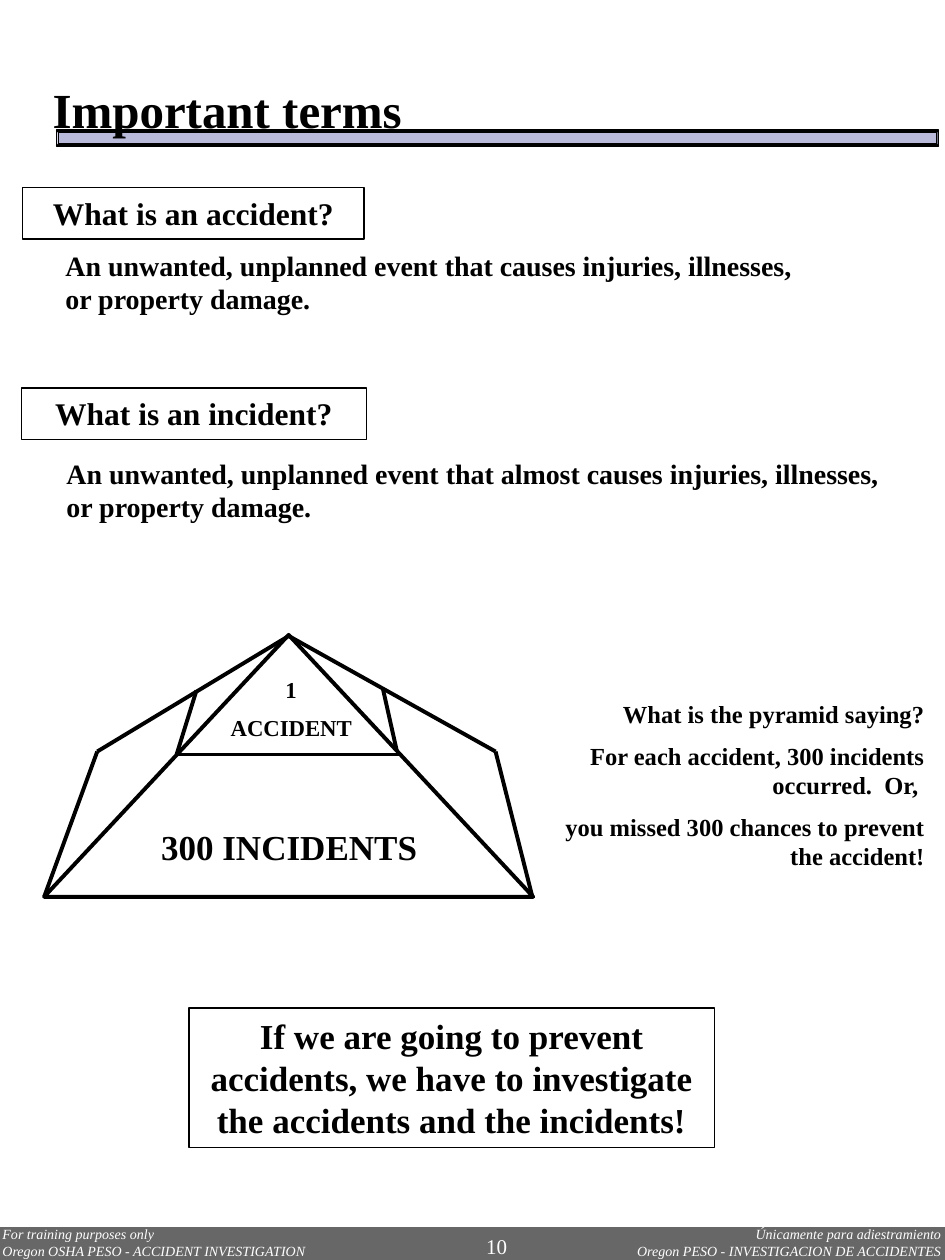
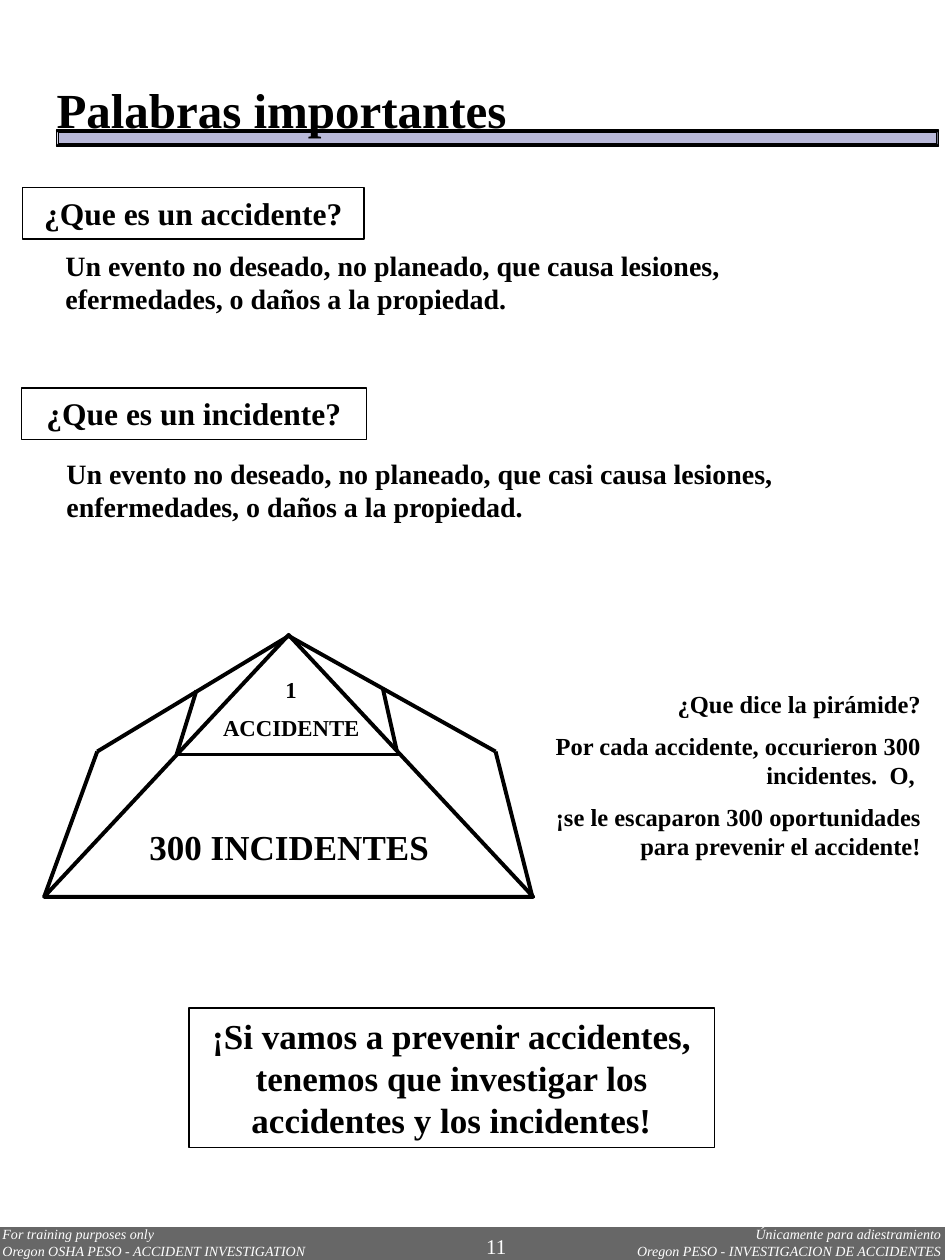
from dataclasses import dataclass
from itertools import pairwise

from lxml.etree import SubElement
from pptx import Presentation
from pptx.dml.color import RGBColor
from pptx.enum.shapes import MSO_CONNECTOR, MSO_SHAPE
from pptx.enum.text import MSO_ANCHOR, MSO_AUTO_SIZE, PP_ALIGN
from pptx.oxml.ns import qn
from pptx.util import Cm, Pt

# Content
PAGES = [
    {
        "number": "10",
        "title": "Important terms",
        "title_box": (0.81, 1.47, 10.16, 1.45),
        "terms": [
            ("What is an accident?",
             "An unwanted, unplanned event that causes injuries, illnesses, or property damage."),
            ("What is an incident?",
             "An unwanted, unplanned event that almost causes injuries, illnesses, or property damage."),
        ],
        "peak": ["1", "ACCIDENT"],
        "base": "300 INCIDENTS",
        "meaning": [
            "What is the pyramid saying?",
            "For each accident, 300 incidents occurred.  Or, ",
            "you missed 300 chances to prevent the accident!",
        ],
        "meaning_box": (9.8, 13.97, 9.09, 3.84),
        "conclusion": "If we are going to prevent accidents, we have to investigate "
                      "the accidents and the incidents!",
    },
    {
        "number": "11",
        "title": "Palabras importantes",
        "title_box": (0.89, 1.47, 11.23, 1.45),
        "terms": [
            ("¿Que es un accidente?",
             "Un evento no deseado, no planeado, que causa lesiones, efermedades, "
             "o daños a la propiedad."),
            ("¿Que es un incidente?",
             "Un evento no deseado, no planeado, que casi causa lesiones, enfermedades, "
             "o daños a la propiedad."),
        ],
        "peak": ["1", "ACCIDENTE"],
        "base": "300 INCIDENTES",
        "meaning": [
            "¿Que dice la pirámide?",
            "Por cada accidente, occurieron 300 incidentes.  O, ",
            "¡se le escaparon 300 oportunidades para prevenir el accidente!",
        ],
        "meaning_box": (9.73, 13.77, 9.09, 3.84),
        "conclusion": "¡Si vamos a prevenir accidentes, tenemos que investigar "
                      "los accidentes y los incidentes!",
    },
]
FOOTER_LEFT = ["For training purposes only", "Oregon OSHA PESO - ACCIDENT INVESTIGATION"]
FOOTER_RIGHT = ["Únicamente para adiestramiento", "Oregon PESO - INVESTIGACION DE ACCIDENTES"]

# Places in cm: left, top, width, height
PAGE_W, PAGE_H = 19.05, 25.4
FOOTER_TOP = 24.74
TERM_BOXES = [
    ((0.46, 3.78, 6.88, 1.04), (1.07, 4.88, 15.7, 1.63)),
    ((0.43, 7.82, 6.96, 1.04), (1.09, 9.07, 17.15, 1.63)),
]
PYRAMID = (0.89, 12.8, 9.86, 5.28)
PYRAMID_EDGES = [
    [(0.89, 18.08), (1.96, 15.15), (5.82, 12.82), (9.99, 15.15), (10.73, 18.07)],
    [(3.96, 13.92), (3.56, 15.21), (8.1, 15.21)],
    [(8, 15.14), (7.72, 13.89)],
]


@dataclass(frozen=True)
class Theme:
    font: str = "Times New Roman"
    ink: RGBColor = RGBColor(0, 0, 0)
    paper: RGBColor = RGBColor(255, 255, 255)
    footer: RGBColor = RGBColor(0x67, 0x67, 0x67)
    rule: RGBColor = RGBColor(0xB9, 0xB9, 0xD9)
    title: int = 28
    strong: int = 20
    question: int = 18
    answer: int = 16
    meaning: int = 14
    peak: int = 13
    number: int = 12
    small: int = 8
    thin: float = 0.75
    thick: float = 2.25


T = Theme()


def cm(box):
    return [Cm(v) for v in box]


def add_shape(shapes, kind, box, fill=None, line=None):
    sp = shapes.add_shape(kind, *cm(box))
    sp.shadow.inherit = False
    if fill is None:
        sp.fill.background()
    else:
        sp.fill.solid()
        sp.fill.fore_color.rgb = fill
    if line is None:
        sp.line.fill.background()
    else:
        sp.line.color.rgb = T.ink
        sp.line.width = Pt(line)
    return sp


def add_text(shapes, box, text, *, size, color=T.ink, bold=True, italic=False,
             align=PP_ALIGN.LEFT, frame=False, inset=True, gap=0, indent=0):
    """Write one or more paragraphs; gap is a share of the type size, indent is in cm."""
    if frame:
        sp = add_shape(shapes, MSO_SHAPE.RECTANGLE, box, line=T.thin)
    else:
        sp = shapes.add_textbox(*cm(box))
    tf = sp.text_frame
    tf.word_wrap = True
    tf.auto_size = MSO_AUTO_SIZE.SHAPE_TO_FIT_TEXT
    tf.vertical_anchor = MSO_ANCHOR.TOP
    if not inset:
        tf.margin_left = tf.margin_right = tf.margin_top = tf.margin_bottom = 0
    for i, words in enumerate([text] if isinstance(text, str) else text):
        p = tf.add_paragraph() if i else tf.paragraphs[0]
        p.alignment = align
        if i:
            p.space_before = Pt(size * gap)
            if indent:
                p.level = 1
                pPr = p._p.get_or_add_pPr()
                pPr.set("marL", str(Cm(indent)))
                pPr.set("indent", "0")
        r = p.add_run()
        r.text = words
        r.font.name = T.font
        r.font.size = Pt(size)
        r.font.bold = bold
        r.font.italic = italic
        r.font.color.rgb = color
    return sp


def add_line(shapes, start, end):
    c = shapes.add_connector(MSO_CONNECTOR.STRAIGHT, *cm(start + end))
    c.line.color.rgb = T.ink
    c.line.width = Pt(T.thick)
    SubElement(c._element.spPr, qn("a:effectLst"))


def add_footer(s, number):
    add_shape(s.shapes, MSO_SHAPE.RECTANGLE,
              (0, FOOTER_TOP, PAGE_W, PAGE_H - FOOTER_TOP), fill=T.footer)
    for box, text, align in [
        ((10.34, 24.71, 8.64, 0.69), FOOTER_RIGHT, PP_ALIGN.RIGHT),
        ((0.05, 24.71, 8.48, 0.69), FOOTER_LEFT, PP_ALIGN.LEFT),
    ]:
        add_text(s.shapes, box, text, size=T.small, color=T.paper, bold=False,
                 italic=True, align=align, inset=False)
    add_text(s.shapes, (9.55, FOOTER_TOP, 1.02, 0.76), number,
             size=T.number, color=T.paper, bold=False)


def add_pyramid(s, peak, base):
    shapes = s.shapes.add_group_shape().shapes
    add_shape(shapes, MSO_SHAPE.ISOSCELES_TRIANGLE, PYRAMID, line=T.thick)
    for chain in PYRAMID_EDGES:
        for start, end in pairwise(chain):
            add_line(shapes, start, end)
    add_text(shapes, (2.64, 16.51, 6.38, 1.09), base, size=T.strong, align=PP_ALIGN.CENTER)
    add_text(shapes, (4.22, 13.49, 3.3, 1.63), peak, size=T.peak,
             align=PP_ALIGN.CENTER, gap=0.5)


def add_page(prs, page):
    s = prs.slides.add_slide(prs.slide_layouts[6])
    add_footer(s, page["number"])

    # Title rule
    bevel = add_shape(s.shapes, MSO_SHAPE.BEVEL, (1.14, 2.62, 17.78, 0.33), fill=T.rule, line=1)
    bevel.adjustments[0] = 0.125

    # Questions and answers
    for (question, answer), (q_box, a_box) in zip(page["terms"], TERM_BOXES):
        add_text(s.shapes, q_box, question, size=T.question, align=PP_ALIGN.CENTER, frame=True)
        add_text(s.shapes, a_box, answer, size=T.answer)

    # Pyramid and its meaning
    add_text(s.shapes, page["meaning_box"], page["meaning"], size=T.meaning,
             align=PP_ALIGN.RIGHT, gap=0.5, indent=0.97)
    add_pyramid(s, page["peak"], page["base"])

    # Conclusion, then the title above the rule
    add_text(s.shapes, (3.81, 20.32, 10.59, 2.82), page["conclusion"], size=T.strong,
             align=PP_ALIGN.CENTER, frame=True)
    add_text(s.shapes, page["title_box"], page["title"], size=T.title)


def main():
    prs = Presentation()
    prs.slide_width, prs.slide_height = Cm(PAGE_W), Cm(PAGE_H)
    for page in PAGES:
        add_page(prs, page)
    prs.save("out.pptx")


if __name__ == "__main__":
    main()
